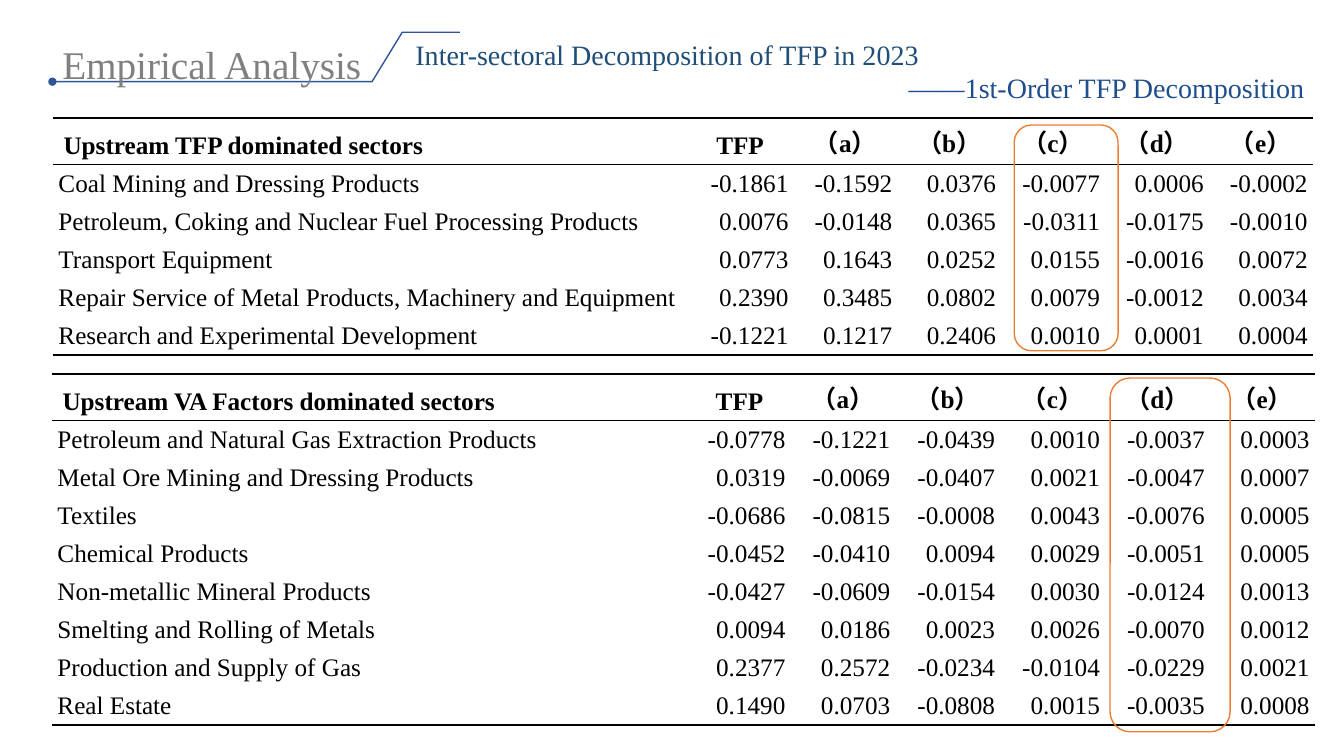
"""Build the slide on the inter-sectoral decomposition of TFP."""
from lxml import etree
from pptx import Presentation
from pptx.dml.color import RGBColor
from pptx.enum import shapes, text
from pptx.oxml import ns
from pptx.util import Inches, Pt

FONT = "Times New Roman"
BLACK = RGBColor(0x00, 0x00, 0x00)
GREY = RGBColor(0x80, 0x80, 0x80)
BLUE = RGBColor(0x2F, 0x55, 0x97)
TITLE_BLUE = RGBColor(0x1F, 0x4E, 0x79)
SUBTITLE_BLUE = RGBColor(0x1F, 0x4E, 0x8D)
ORANGE = RGBColor(0xED, 0x7D, 0x31)

COLUMNS = ["TFP", "（a）", "（b）", "（c）", "（d）", "（e）"]
UPSTREAM_TFP = [
    ["Upstream TFP dominated sectors", *COLUMNS],
    ["Coal Mining and Dressing Products", "-0.1861", "-0.1592", "0.0376", "-0.0077", "0.0006", "-0.0002"],
    ["Petroleum, Coking and Nuclear Fuel Processing Products",
     "0.0076", "-0.0148", "0.0365", "-0.0311", "-0.0175", "-0.0010"],
    ["Transport Equipment", "0.0773", "0.1643", "0.0252", "0.0155", "-0.0016", "0.0072"],
    ["Repair Service of Metal Products, Machinery and Equipment",
     "0.2390", "0.3485", "0.0802", "0.0079", "-0.0012", "0.0034"],
    ["Research and Experimental Development", "-0.1221", "0.1217", "0.2406", "0.0010", "0.0001", "0.0004"],
]
UPSTREAM_VA = [
    ["Upstream VA Factors dominated sectors", *COLUMNS],
    ["Petroleum and Natural Gas Extraction Products",
     "-0.0778", "-0.1221", "-0.0439", "0.0010", "-0.0037", "0.0003"],
    ["Metal Ore Mining and Dressing Products", "0.0319", "-0.0069", "-0.0407", "0.0021", "-0.0047", "0.0007"],
    ["Textiles", "-0.0686", "-0.0815", "-0.0008", "0.0043", "-0.0076", "0.0005"],
    ["Chemical Products", "-0.0452", "-0.0410", "0.0094", "0.0029", "-0.0051", "0.0005"],
    ["Non-metallic Mineral Products", "-0.0427", "-0.0609", "-0.0154", "0.0030", "-0.0124", "0.0013"],
    ["Smelting and Rolling of Metals", "0.0094", "0.0186", "0.0023", "0.0026", "-0.0070", "0.0012"],
    ["Production and Supply of Gas", "0.2377", "0.2572", "-0.0234", "-0.0104", "-0.0229", "0.0021"],
    ["Real Estate", "0.1490", "0.0703", "-0.0808", "0.0015", "-0.0035", "0.0008"],
]
TABLES = [
    (UPSTREAM_VA, 0.52, 3.71, 0.31, [6.31, 1.01] + [1.04] * 5),
    (UPSTREAM_TFP, 0.53, 1.17, 0.35, [6.28, 1.06] + [1.03] * 5),
]
HIGHLIGHTS = [(10.06, 1.24, 1.03, 2.24), (11.01, 3.75, 1.19, 3.51)]


def style(paragraph, size, color, bold=False):
    for span in paragraph.runs:
        span.font.name = FONT
        span.font.size = Pt(size)
        span.font.bold = bold
        span.font.color.rgb = color


def set_borders(cell, top, bottom):
    properties = cell._tc.get_or_add_tcPr()
    for index, (side, points) in enumerate([("L", 0), ("R", 0), ("T", top), ("B", bottom)]):
        line = etree.Element(ns.qn(f"a:ln{side}"), w=str(Pt(points)))
        if points:
            fill = etree.SubElement(line, ns.qn("a:solidFill"))
            etree.SubElement(fill, ns.qn("a:srgbClr"), val=str(BLACK))
        else:
            etree.SubElement(line, ns.qn("a:noFill"))
        properties.insert(index, line)


deck = Presentation()
deck.slide_width = Inches(13.33)
deck.slide_height = Inches(7.5)
page = deck.slides.add_slide(deck.slide_layouts[5])

builder = page.shapes.build_freeform(Inches(0.52), Inches(0.81))
builder.add_line_segments(
    [(Inches(x), Inches(y)) for x, y in [(3.69, 0.81), (3.99, 0.32), (4.56, 0.32)]], close=False)
section = builder.convert_to_shape()
section.shadow.inherit = False
section.fill.background()
section.line.color.rgb = BLUE
section.line.width = Pt(1)
etree.SubElement(section.line._get_or_add_ln(), ns.qn("a:headEnd"), type="oval")
section.text_frame.text = "Empirical Analysis"
section.text_frame.word_wrap = True
section.text_frame.vertical_anchor = text.MSO_ANCHOR.MIDDLE
section_name = section.text_frame.paragraphs[0]
section_name.alignment = text.PP_ALIGN.LEFT
section_name.line_spacing = 1.3
style(section_name, 28, GREY)

title = page.shapes.title
title.left, title.top, title.width, title.height = map(Inches, (4.02, 0.32, 9.02, 0.77))
title.text_frame.text = "Inter-sectoral Decomposition of TFP in 2023\n——1st-Order TFP Decomposition"
title.text_frame.word_wrap = True
title.text_frame.auto_size = text.MSO_AUTO_SIZE.NONE
title.text_frame.vertical_anchor = text.MSO_ANCHOR.TOP
heading, subheading = title.text_frame.paragraphs
heading.alignment = text.PP_ALIGN.LEFT
subheading.alignment = text.PP_ALIGN.RIGHT
style(heading, 20, TITLE_BLUE)
style(subheading, 20, SUBTITLE_BLUE)

for rows, left, top, row_height, widths in TABLES:
    frame = page.shapes.add_table(
        len(rows), len(widths), Inches(left), Inches(top),
        Inches(sum(widths)), Inches(row_height * len(rows)))
    table = frame.table
    table.first_row = False
    table.horz_banding = False
    for column, width in zip(table.columns, widths):
        column.width = Inches(width)
    for row_index, values in enumerate(rows):
        is_header = row_index == 0
        table.rows[row_index].height = Inches(row_height)
        top_line = {0: 1.5, 1: 0.75}.get(row_index, 0)
        bottom_line = 0.75 if is_header else 1.5 if row_index == len(rows) - 1 else 0
        for column_index, value in enumerate(values):
            cell = table.cell(row_index, column_index)
            cell.text_frame.text = value
            cell.vertical_anchor = text.MSO_ANCHOR.BOTTOM
            cell.margin_left = cell.margin_right = Inches(0.1 if is_header else 0.05)
            cell.margin_top = cell.margin_bottom = Inches(0.05)
            cell.fill.background()
            set_borders(cell, top_line, bottom_line)
            paragraph = cell.text_frame.paragraphs[0]
            if column_index == 0:
                paragraph.alignment = text.PP_ALIGN.LEFT
            else:
                paragraph.alignment = text.PP_ALIGN.CENTER if is_header else text.PP_ALIGN.RIGHT
            style(paragraph, 18, BLACK, is_header)

for bounds in HIGHLIGHTS:
    highlight = page.shapes.add_shape(shapes.MSO_SHAPE.ROUNDED_RECTANGLE, *map(Inches, bounds))
    highlight.shadow.inherit = False
    highlight.fill.background()
    highlight.line.color.rgb = ORANGE
    highlight.line.width = Pt(1)

deck.save("out.pptx")
